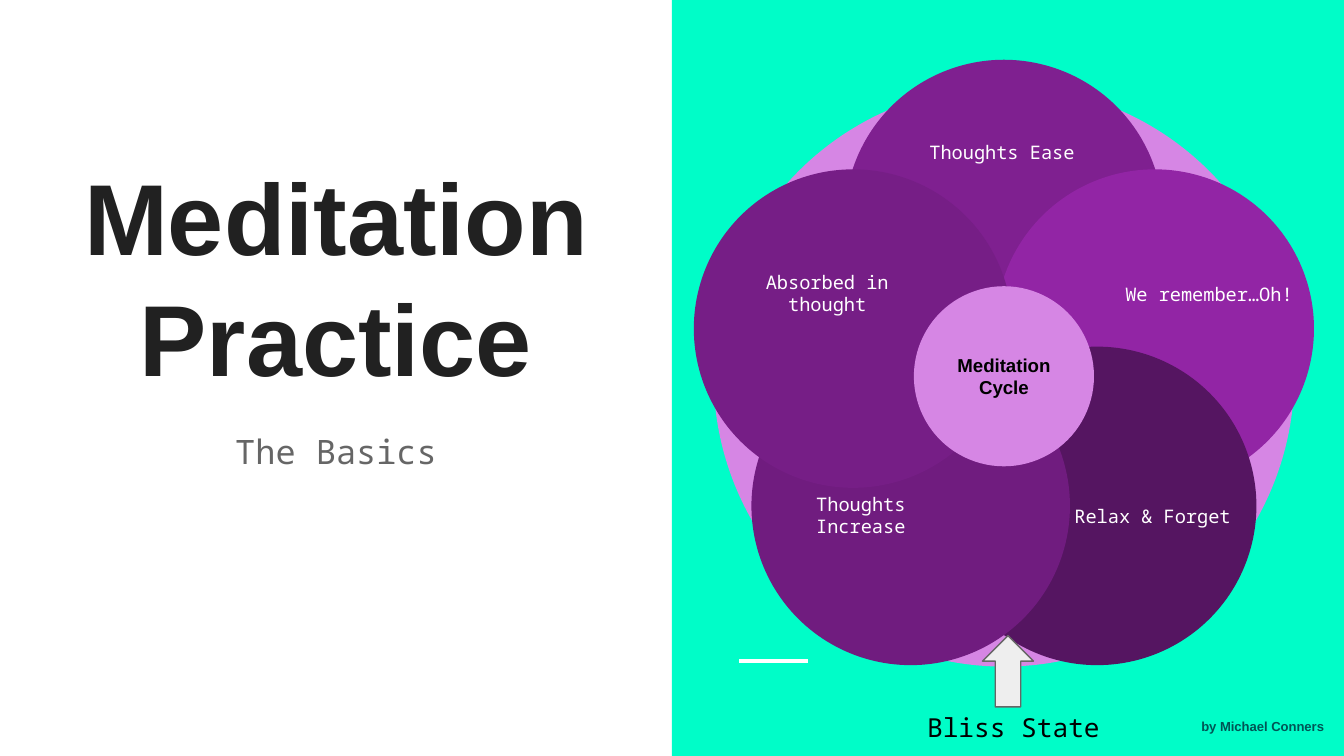
from math import cos, radians, sin

from pptx import Presentation
from pptx.dml.color import RGBColor
from pptx.enum.shapes import MSO_CONNECTOR, MSO_SHAPE
from pptx.enum.text import MSO_ANCHOR, MSO_AUTO_SIZE, PP_ALIGN
from pptx.oxml.ns import qn
from pptx.util import Inches, Pt

THEME = {
    "head": "Arial", "mono": "Noto Sans Mono",
    "panel": "00FDC8", "white": "FFFFFF", "black": "000000",
    "title": "212121", "grey": "666666", "byline": "005555",
    "lilac": "D686E4", "arrow": "EEEEEE",
    "huge": 54, "large": 18, "medium": 14, "small": 10, "tiny": 7,
}

TITLE = "Meditation Practice"
SUBTITLE = "The Basics"
HUB = ["Meditation", "Cycle"]
GOAL = "Bliss State"
AUTHOR = "by Michael Conners"

# Clockwise from the top: label, fill, label left, label top
PETALS = [
    ("Thoughts Ease", "7F2090", 6.73, 0.77),
    ("We remember…Oh!", "9225A5", 8.27, 1.83),
    ("Relax & Forget", "551561", 7.85, 3.48),
    ("Thoughts Increase", "701C7F", 5.68, 3.47),
    ("Absorbed in thought", "761E86", 5.43, 1.82),
]
WIDE = 10
HIGH = WIDE * 9 / 16
MID_X, MID_Y = 7.47, 2.81
ORBIT = 1.18
PETAL, DISC, CORE = 2.37, 4.32, 1.34
LABEL = (1.45, 0.72)


def tint(name):
    return RGBColor.from_string(THEME.get(name, name))


def place(shape, box):
    shape.left, shape.top, shape.width, shape.height = map(Inches, box)
    return shape


def write(shape, lines, font="mono", size="small", color="white", bold=False,
          align=PP_ALIGN.CENTER, anchor=MSO_ANCHOR.MIDDLE, gap=None, after=0,
          fit=MSO_AUTO_SIZE.NONE):
    frame = shape.text_frame
    frame.auto_size = fit
    frame.word_wrap = True
    frame.vertical_anchor = anchor
    frame.margin_left = frame.margin_right = Inches(0.1)
    frame.margin_top = frame.margin_bottom = Inches(0.1)
    frame.text = "\n".join(lines)
    for para in frame.paragraphs:
        para.alignment = align
        para.space_before = Pt(0)
        para.space_after = Pt(after)
        if gap:
            para.line_spacing = gap
        for run in para.runs:
            run.font.name = THEME[font]
            run.font.size = Pt(THEME[size])
            run.font.bold = bold
            run.font.color.rgb = tint(color)


def draw(parent, kind, box, fill, line=None):
    shape = parent.add_shape(kind, *map(Inches, box))
    shape.shadow.inherit = False
    shape.fill.solid()
    shape.fill.fore_color.rgb = tint(fill)
    if line:
        shape.line.color.rgb = tint(line)
        shape.line.width = Pt(0.75)
    else:
        shape.line.fill.background()
    return shape


def circle(parent, x, y, size, fill):
    """Draw a circle around the centre x, y."""
    box = (x - size / 2, y - size / 2, size, size)
    return draw(parent, MSO_SHAPE.OVAL, box, fill)


def note(parent, box, text, **form):
    write(parent.add_textbox(*map(Inches, box)), [text], **form)


def add_rule(shapes):
    rule = shapes.add_connector(MSO_CONNECTOR.STRAIGHT, Inches(5.5),
                                Inches(4.92), Inches(6.01), Inches(4.92))
    rule.line.color.rgb = tint("white")
    rule.line.width = Pt(2.25)
    props = rule._element.spPr
    props.append(props.makeelement(qn("a:effectLst"), {}))


def add_heads(slide):
    title, sub = slide.placeholders
    write(place(title, (0.29, 1.18, 4.42, 1.87)), [TITLE], font="head",
          size="huge", color="title", bold=True, anchor=MSO_ANCHOR.BOTTOM)
    write(place(sub, (0.29, 3.11, 4.42, 1.47)), [SUBTITLE], size="large",
          color="grey", anchor=MSO_ANCHOR.TOP)


def add_cycle(shapes):
    circle(shapes, MID_X, 2.8, DISC, "lilac")
    for i, (text, fill, left, top) in enumerate(PETALS):
        turn = radians(360 / len(PETALS) * i)
        group = shapes.add_group_shape().shapes
        circle(group, MID_X + ORBIT * sin(turn), MID_Y - ORBIT * cos(turn),
               PETAL, fill)
        note(group, (left, top, *LABEL), text)
    hub = circle(shapes, MID_X, 2.8, CORE, "lilac")
    write(hub, HUB, font="head", color="black", bold=True)


def main():
    deck = Presentation()
    deck.slide_width, deck.slide_height = Inches(WIDE), Inches(HIGH)
    slide = deck.slides.add_slide(deck.slide_layouts[0])
    shapes = slide.shapes
    draw(shapes, MSO_SHAPE.RECTANGLE, (WIDE / 2, 0, WIDE / 2, HIGH), "panel")
    add_rule(shapes)
    add_heads(slide)
    add_cycle(shapes)
    draw(shapes, MSO_SHAPE.UP_ARROW, (7.31, 4.73, 0.38, 0.53), "arrow", "grey")
    foot = {"align": PP_ALIGN.LEFT, "anchor": MSO_ANCHOR.TOP,
            "fit": MSO_AUTO_SIZE.SHAPE_TO_FIT_TEXT}
    note(shapes, (6.8, 5.19, 2.9, 0.44), GOAL, size="medium", color="black",
         **foot)
    note(shapes, (8.84, 5.26, 1.16, 0.32), AUTHOR, font="head", size="tiny",
         color="byline", bold=True, gap=1.15, after=4, **foot)
    deck.save("out.pptx")


if __name__ == "__main__":
    main()
